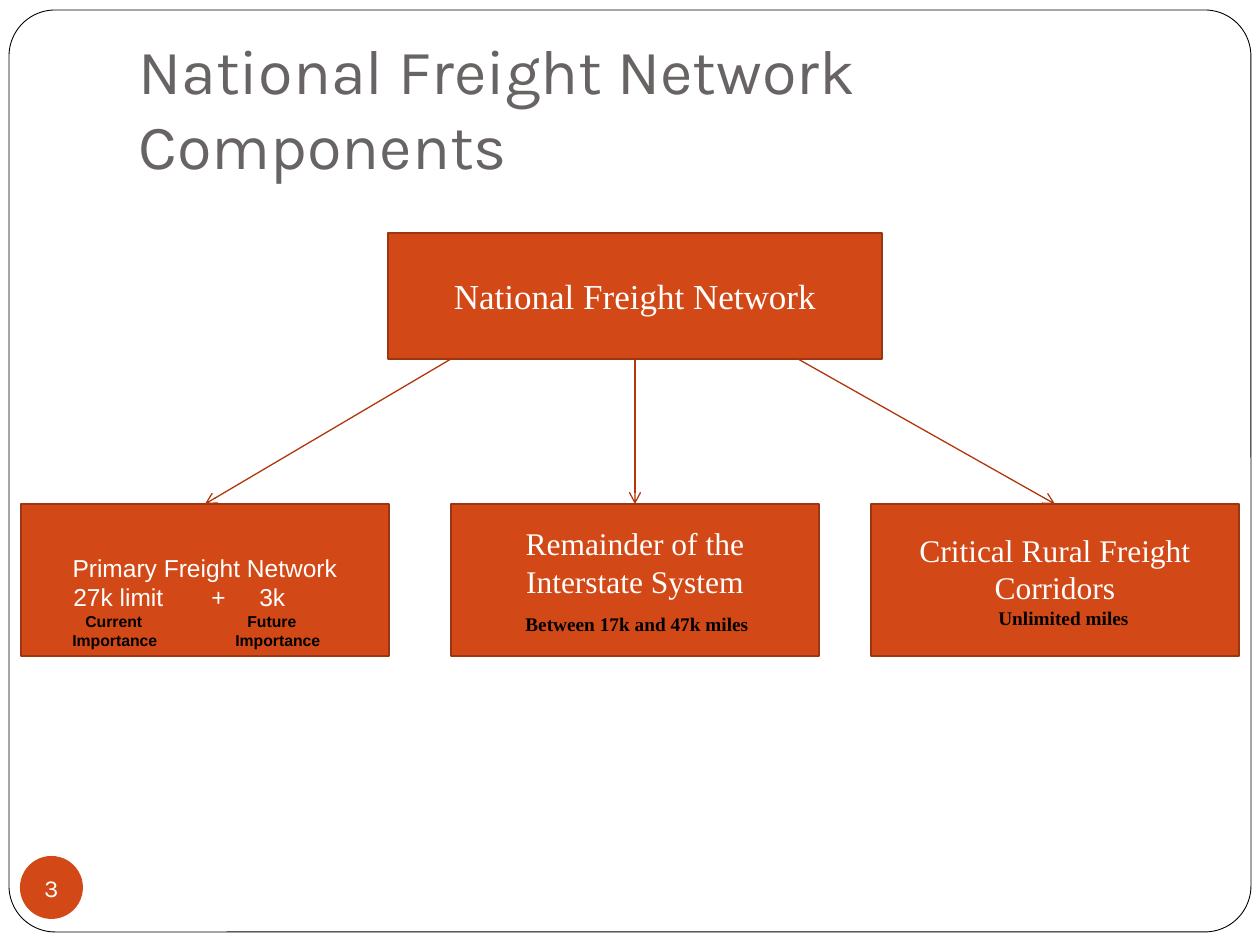
"""Builds the National Freight Network components slide."""
from dataclasses import dataclass

from lxml import etree
from pptx import Presentation
from pptx import util as u
from pptx.dml.color import RGBColor
from pptx.enum import shapes, text
from pptx.oxml.ns import qn

PX = 914400 / 126


@dataclass(frozen=True)
class Theme:
    orange: str = "D34817"
    edge: str = "9C3511"
    arrow: str = "B1360B"
    grey: str = "696464"
    white: str = "FFFFFF"
    black: str = "000000"
    heading_font: str = "Karla"
    serif: str = "Times New Roman"
    sans: str = "Arial"
    title: int = 36
    root: int = 20
    branch: int = 18
    body: int = 14
    miles: int = 11
    small: int = 9


theme = Theme()


def add_block(kind, box, fill, edge=None, width=1):
    block = slide.shapes.add_shape(kind, *(u.Emu(round(n * PX)) for n in box))
    block.shadow.inherit = False
    block.fill.solid()
    block.fill.fore_color.rgb = RGBColor.from_string(fill)
    if edge:
        block.line.color.rgb = RGBColor.from_string(edge)
        block.line.width = u.Pt(width)
    else:
        block.line.fill.background()
    return block


def write(shape, rows, font_name, anchor, align=text.PP_ALIGN.CENTER):
    frame = shape.text_frame
    frame.vertical_anchor = anchor
    for index, (words, size, colour, style) in enumerate(rows):
        line = frame.add_paragraph() if index else frame.paragraphs[0]
        indented = "indent" in style or "tabs" in style
        line.alignment = text.PP_ALIGN.LEFT if indented else align
        line.space_before = u.Pt(style.get("before", 0))
        props = line._p.get_or_add_pPr()
        if "indent" in style:
            props.set("marL", str(round(style["indent"] * PX)))
        if "tabs" in style:
            stops = etree.SubElement(props, qn("a:tabLst"))
            for stop in style["tabs"]:
                etree.SubElement(stops, qn("a:tab"), pos=str(round(stop * PX)), algn="l")
        run = line.add_run()
        run.text = words
        run.font.color.rgb = RGBColor.from_string(colour)
        formats = {"name": font_name, "size": u.Pt(size), "bold": style.get("bold", False)}
        for key, value in formats.items():
            setattr(run.font, key, value)


deck = Presentation()
deck.slide_width, deck.slide_height = round(1260 * PX), round(945 * PX)
slide = deck.slides.add_slide(deck.slide_layouts[5])

title = slide.shapes.title
title_place = {"left": 126, "top": 38, "width": 1071, "height": 157}
for side, length in title_place.items():
    setattr(title, side, u.Emu(round(length * PX)))
title_format = {
    "word_wrap": True,
    "auto_size": text.MSO_AUTO_SIZE.NONE,
    "margin_bottom": u.Inches(0.1),
}
for key, value in title_format.items():
    setattr(title.text_frame, key, value)
write(title, [("National Freight Network Components", theme.title, theme.grey, {})],
      theme.heading_font, text.MSO_ANCHOR.BOTTOM, text.PP_ALIGN.LEFT)

card = add_block(shapes.MSO_SHAPE.ROUNDED_RECTANGLE, (9, 10, 1242, 922),
                 theme.white, theme.black, 0.5)
card.adjustments[0] = 0.05
title._element.addprevious(card._element)

page_number = add_block(shapes.MSO_SHAPE.OVAL, (20, 856, 63, 63), theme.orange)
for side in ("left", "top", "right", "bottom"):
    setattr(page_number.text_frame, f"margin_{side}", 0)
page_number.text_frame.word_wrap = False
write(page_number, [("3", theme.body, theme.white, {})],
      theme.heading_font, text.MSO_ANCHOR.MIDDLE)

network = add_block(shapes.MSO_SHAPE.RECTANGLE, (388, 233, 494, 126), theme.orange, theme.edge)
write(network, [("National Freight Network", theme.root, theme.white, {})],
      theme.serif, text.MSO_ANCHOR.MIDDLE)

primary_rows = [
    ("Primary Freight Network", theme.body, theme.white, {}),
    ("\t27k limit\t+\t3k", theme.body, theme.white, {"tabs": (40, 178, 226)}),
    ("\tCurrent\tFuture", theme.small, theme.black, {"tabs": (52, 214), "bold": True}),
    ("\tImportance\tImportance", theme.small, theme.black, {"tabs": (39, 202), "bold": True}),
]
interstate_rows = [
    ("Remainder of the Interstate System", theme.branch, theme.white, {}),
    ("Between 17k and 47k miles", theme.miles, theme.black,
     {"indent": 62, "before": 7, "bold": True}),
]
rural_rows = [
    ("Critical Rural Freight Corridors", theme.branch, theme.white, {}),
    ("Unlimited miles", theme.miles, theme.black, {"indent": 115, "bold": True}),
]
branches = [
    (21, 451, primary_rows, theme.sans, text.MSO_ANCHOR.BOTTOM),
    (451, 635, interstate_rows, theme.serif, text.MSO_ANCHOR.MIDDLE),
    (871, 798, rural_rows, theme.serif, text.MSO_ANCHOR.MIDDLE),
]
for left, start, rows, font_name, anchor in branches:
    branch = add_block(shapes.MSO_SHAPE.RECTANGLE, (left, 504, 368, 152),
                       theme.orange, theme.edge)
    write(branch, rows, font_name, anchor)
    ends = (start, 359, left + 184, 504)
    arrow = slide.shapes.add_connector(shapes.MSO_CONNECTOR.STRAIGHT,
                                       *(u.Emu(round(n * PX)) for n in ends))
    if start == 635:
        arrow.begin_connect(network, 2)
    arrow.end_connect(branch, 0)
    arrow.line.color.rgb = RGBColor.from_string(theme.arrow)
    arrow.line.width = u.Pt(0.75)
    etree.SubElement(arrow.line._get_or_add_ln(), qn("a:tailEnd"), type="arrow")
    etree.SubElement(arrow._element.spPr, qn("a:effectLst"))

deck.save("out.pptx")
